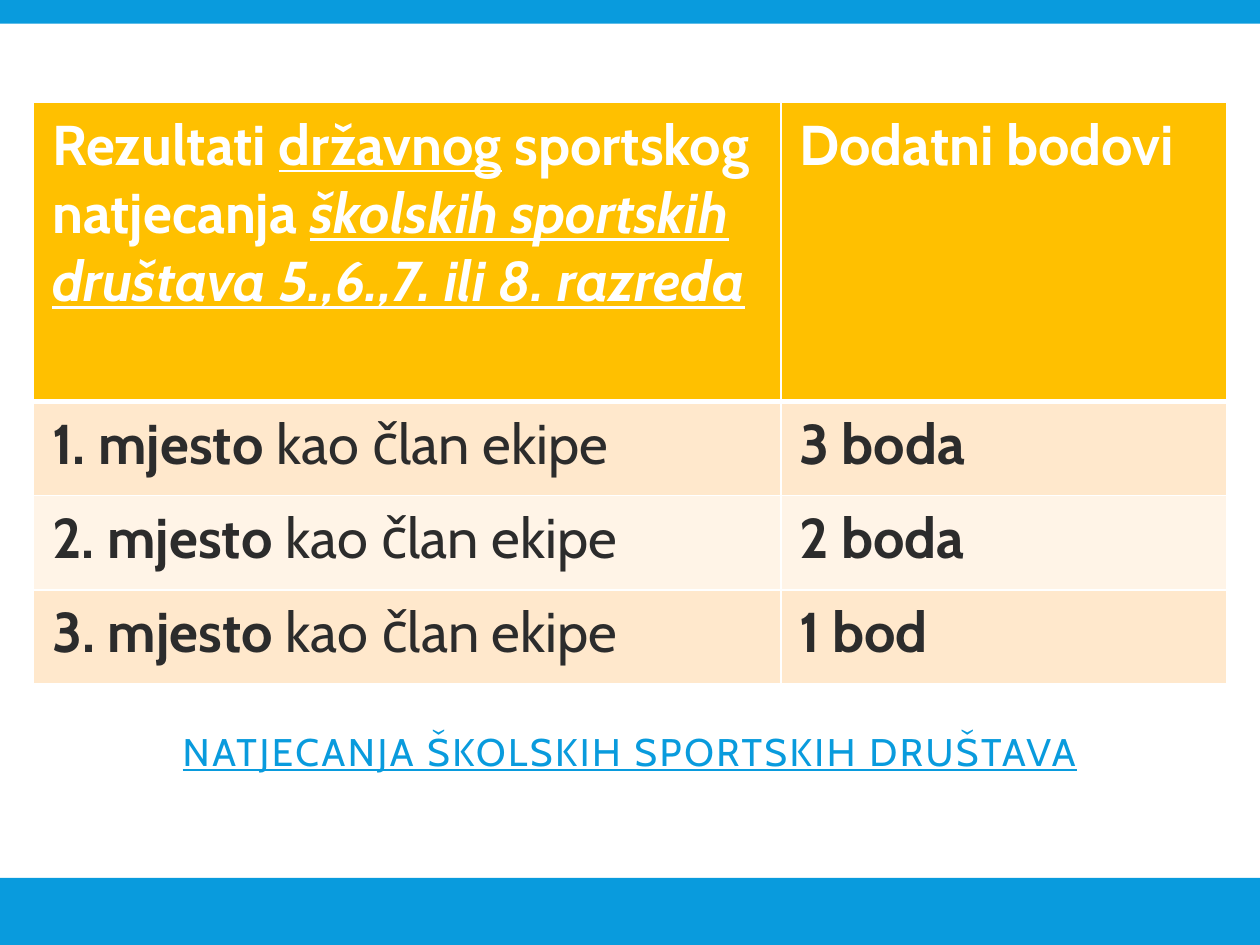
from lxml import etree
from pptx import Presentation
from pptx.dml.color import RGBColor
from pptx.enum.shapes import MSO_SHAPE
from pptx.enum.text import MSO_ANCHOR, PP_ALIGN
from pptx.oxml.ns import qn
from pptx.util import Cm, Pt

RECTANGLE = MSO_SHAPE.RECTANGLE
TOP = MSO_ANCHOR.TOP
CENTER = PP_ALIGN.CENTER

BLUE = RGBColor(0x09, 0x9B, 0xDD)
GOLD = RGBColor(0xFF, 0xC0, 0x00)
PEACH = RGBColor(0xFF, 0xE8, 0xCC)
CREAM = RGBColor(0xFF, 0xF4, 0xE7)
DARK = RGBColor(0x2C, 0x2C, 0x2C)
WHITE = RGBColor(0xFF, 0xFF, 0xFF)

FONT = "Cabin"
WIDTH, HEIGHT = 25.4, 19.05

HEADER = [
    [
        ("Rezultati ", {}),
        ("državnog", {"underline": True}),
        (" sportskog natjecanja ", {}),
        ("školskih sportskih društava 5.,6.,7. ili 8. razreda",
         {"italic": True, "underline": True}),
    ],
    [("Dodatni bodovi", {})],
]
RESULTS = [("1. mjesto", "3 boda"), ("2. mjesto", "2 boda"), ("3. mjesto", "1 bod")]


def add_text(p, text, size=32, color=DARK, bold=False, italic=False,
             underline=False, spacing=None):
    r = p.add_run()
    r.text = text
    font = r.font
    font.name = FONT
    font.size = Pt(size)
    font.bold = bold
    font.italic = italic
    font.underline = underline
    font.color.rgb = color
    if spacing:
        r._r.get_or_add_rPr().set("spc", str(int(spacing * 100)))


def add_band(s, left, top, width, height):
    sp = s.shapes.add_shape(RECTANGLE, Cm(left), Cm(top), Cm(width), Cm(height))
    sp.shadow.inherit = False
    sp.fill.solid()
    sp.fill.fore_color.rgb = BLUE
    sp.line.fill.background()


def set_borders(cell, widths):
    tcPr = cell._tc.get_or_add_tcPr()
    for i, (side, width) in enumerate(zip("LRTB", widths)):
        ln = etree.Element(qn(f"a:ln{side}"), w=str(Pt(width)))
        fill = etree.SubElement(ln, qn("a:solidFill"))
        etree.SubElement(fill, qn("a:srgbClr"), val=str(WHITE))
        tcPr.insert(i, ln)


def fill_cell(cell, runs, fill, widths, **base):
    cell.margin_left = cell.margin_right = Cm(0.37)
    cell.margin_top = cell.margin_bottom = Cm(0.18)
    cell.vertical_anchor = TOP
    cell.fill.solid()
    cell.fill.fore_color.rgb = fill
    set_borders(cell, widths)
    p = cell.text_frame.paragraphs[0]
    for text, style in runs:
        add_text(p, text, **{**base, **style})


def add_points_table(s, left, top, width, height):
    row_height = 1.9
    first_width = 15.06
    count = len(RESULTS)
    table = s.shapes.add_table(count + 1, 2, Cm(left), Cm(top),
                               Cm(width), Cm(height)).table
    table.columns[0].width = Cm(first_width)
    table.columns[1].width = Cm(width - first_width)
    table.rows[0].height = Cm(height - count * row_height)
    for col, runs in enumerate(HEADER):
        fill_cell(table.cell(0, col), runs, GOLD, (1, 1, 1, 3), color=WHITE, bold=True)
    for row, (place, points) in enumerate(RESULTS, 1):
        table.rows[row].height = Cm(row_height)
        fill = PEACH if row % 2 else CREAM
        widths = (1, 1, 3 if row == 1 else 1, 1)
        place_runs = [(place, {"bold": True}), (" kao član ekipe", {})]
        fill_cell(table.cell(row, 0), place_runs, fill, widths)
        fill_cell(table.cell(row, 1), [(points, {"bold": True})], fill, widths)


def add_title(s, left, top, width, height):
    tf = s.shapes.add_textbox(Cm(left), Cm(top), Cm(width), Cm(height)).text_frame
    tf.word_wrap = True
    tf.vertical_anchor = TOP
    p = tf.paragraphs[0]
    p.alignment = CENTER
    p.line_spacing = 0.8
    add_text(p, "NATJECANJA ŠKOLSKIH SPORTSKIH DRUŠTAVA", size=22, color=BLUE,
             underline=True, spacing=1.5)


def main():
    prs = Presentation()
    prs.slide_width, prs.slide_height = Cm(WIDTH), Cm(HEIGHT)
    s = prs.slides.add_slide(prs.slide_layouts[6])
    s.background.fill.solid()
    s.background.fill.fore_color.rgb = WHITE
    add_title(s, 1.35, 14.73, 22.7, 1.83)
    add_band(s, 0, 0, WIDTH, 0.48)
    add_band(s, 0, 17.7, WIDTH, HEIGHT - 17.7)
    add_points_table(s, 0.68, 2.06, 24.05, 11.73)
    prs.save("out.pptx")


if __name__ == "__main__":
    main()
